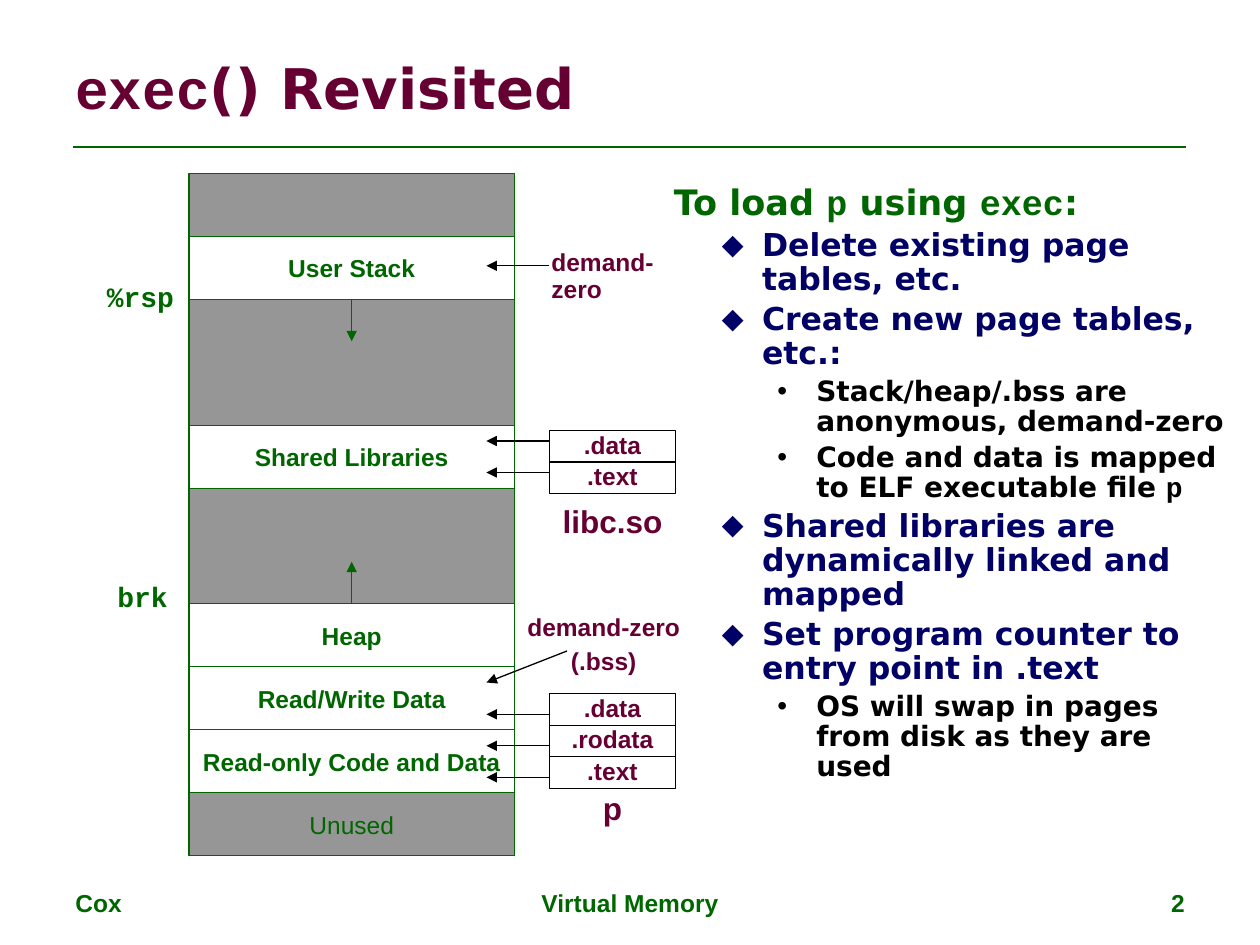
from pptx import Presentation
from pptx.dml.color import RGBColor
from pptx.enum import shapes, text
from pptx.oxml import xmlchemy
from pptx.util import Pt

COLORS = {"green": "006600", "wine": "660033", "navy": "000066",
          "black": "000000", "white": "FFFFFF", "gray": "969696"}
SANS, MONO, HEAD = "Arial", "Courier New", "DejaVu Sans"
LEFT, CENTER, RIGHT = text.PP_ALIGN.LEFT, text.PP_ALIGN.CENTER, text.PP_ALIGN.RIGHT
TOP, MIDDLE = text.MSO_ANCHOR.TOP, text.MSO_ANCHOR.MIDDLE
LEVELS = [dict(size=20, color="green", before=4, left=0, hang=0, bullet=None),
          dict(size=18, color="navy", before=3.6, left=50.4, hang=23,
               bullet=("90000", HEAD, "◆")),
          dict(size=16, color="black", before=3.2, left=81.4, hang=22.3,
               bullet=("100000", SANS, "•"))]
BODY = [(0, "To load `p` using `exec`:"),
        (1, "Delete existing page tables, etc."),
        (1, "Create new page tables, etc.:"),
        (2, "Stack/heap/.bss are anonymous, demand-zero"),
        (2, "Code and data is mapped to ELF executable file `p`"),
        (1, "Shared libraries are dynamically linked and mapped"),
        (1, "Set program counter to entry point in .text"),
        (2, "OS will swap in pages from disk as they are used")]
SEGMENTS = [("User Stack", 36), ("Shared Libraries", 144), ("Heap", 246),
            ("Read/Write Data", 282), ("Read-only Code and Data", 318), ("Unused", 354)]


def rgb(name):
    return RGBColor.from_string(COLORS[name])


def add_xml(parent, tag, **attrs):
    element = xmlchemy.OxmlElement(tag)
    for name, value in attrs.items():
        element.set(name, value)
    parent.append(element)


def add_runs(p, words, size, color, font=SANS, bold=True):
    for i, part in enumerate(words.split("`")):
        if part:
            r = p.add_run()
            r.text = part
            r.font.size, r.font.bold = Pt(size), bold
            r.font.name = MONO if i % 2 else font
            r.font.color.rgb = rgb(color)


def add_label(s, box, lines, size, color, font=SANS, align=LEFT, anchor=TOP,
              wrap=True, tight=False):
    sp = s.shapes.add_textbox(*map(Pt, box))
    tf = sp.text_frame
    tf.word_wrap, tf.vertical_anchor = wrap, anchor
    for i, line in enumerate(lines):
        p = tf.paragraphs[0] if i == 0 else tf.add_paragraph()
        p.alignment = align
        if tight:
            p.line_spacing, p.space_before = 0.9, Pt(4.6)
        add_runs(p, line, size, color, font)


def add_box(s, box, words, fill, line, color, bold=True, spacing=1.0):
    sp = s.shapes.add_shape(shapes.MSO_SHAPE.RECTANGLE, *map(Pt, box))
    sp.shadow.inherit = False
    if fill:
        sp.fill.solid()
        sp.fill.fore_color.rgb = rgb(fill)
    else:
        sp.fill.background()
    sp.line.color.rgb, sp.line.width = rgb(line), Pt(0.75)
    tf = sp.text_frame
    tf.word_wrap, tf.vertical_anchor = False, MIDDLE
    p = tf.paragraphs[0]
    p.alignment, p.line_spacing = CENTER, spacing
    add_runs(p, words, 14, color, bold=bold)
    return sp


def add_line(s, ends, color, width=0.75, arrow=True):
    c = s.shapes.add_connector(shapes.MSO_CONNECTOR.STRAIGHT, *map(Pt, ends))
    c.line.color.rgb, c.line.width = rgb(color), Pt(width)
    if arrow:
        add_xml(c.line._get_or_add_ln(), "a:tailEnd", type="triangle")
    add_xml(c._element.spPr, "a:effectLst")
    return c


def frame(s, x, y, w, h):
    add_label(s, (x, y + 21.6, w, 56.2), ["`exec`() Revisited"], 32, "wine", HEAD, anchor=MIDDLE)
    add_line(s, (x + 6, y + 84, x + w - 6, y + 84), "green", 1.5, arrow=False)
    for words, left, width, align in [("Cox", 0, 168, LEFT),
                                      ("Virtual Memory", 210, 228, CENTER),
                                      ("2", 480, 168, RIGHT)]:
        add_label(s, (x + left, y + h - 36, width, 25), [words], 14, "green", align=align)


def body(s, x, y, w, h):
    sp = s.shapes.add_textbox(*map(Pt, (x, y, w, h)))
    tf = sp.text_frame
    tf.word_wrap = True
    for i, (level, words) in enumerate(BODY):
        style = LEVELS[level]
        p = tf.paragraphs[0] if i == 0 else tf.add_paragraph()
        p.level, p.line_spacing, p.space_before = level, 0.9, Pt(style["before"])
        add_runs(p, words, style["size"], style["color"], HEAD)
        pPr = p._p.get_or_add_pPr()
        pPr.set("marL", str(Pt(style["left"])))
        pPr.set("indent", str(-Pt(style["hang"])))
        if style["bullet"]:
            size, font, char = style["bullet"]
            add_xml(pPr, "a:buSzPct", val=size)
            add_xml(pPr, "a:buFont", typeface=font)
            add_xml(pPr, "a:buChar", char=char)


def memory(s, x, y, w, h):
    add_box(s, (x, y, w, h), "", "gray", "green", "green")
    blocks = {}
    for words, top in SEGMENTS:
        used = words != "Unused"
        blocks[words] = add_box(s, (x, y + top, w, 36), words,
                                "white" if used else None, "green", "green", used)
    mid = x + w / 2
    for words, start, step, side in [("Heap", 246, -24, 0), ("User Stack", 72, 24, 2)]:
        c = add_line(s, (mid, y + start, mid, y + start + step), "green")
        c.begin_connect(blocks[words], side)
    for words, left, top, width in [("`%rsp`", -54, 57, 53), ("`brk`", -48, 228.6, 43)]:
        add_label(s, (x + left, y + top, width, 26.6), [words], 16, "green", wrap=False)


def file_sections(s, x, y, w, names, title, title_top, arrow_top):
    for i, name in enumerate(names):
        top = y + 18 * i
        add_box(s, (x, top, w, 18), name, "white", "black", "wine", spacing=0.9)
        add_line(s, (x, top + arrow_top, x - 36, top + arrow_top), "black")
    add_label(s, (x, y + title_top, w, 26.6), [title], 18, "wine",
              align=CENTER, wrap=False, tight=True)


def demand_zero(s, x, y, w, h, lines, ends, align, wrap):
    add_label(s, (x, y, w, h), lines, 14, "wine", align=align, wrap=wrap, tight=True)
    x1, y1, x2, y2 = ends
    add_line(s, (x + x1, y + y1, x + x2, y + y2), "black")


def main():
    prs = Presentation()
    prs.slide_width, prs.slide_height = Pt(720), Pt(540)
    s = prs.slides.add_slide(prs.slide_layouts[6])
    frame(s, 36, 0, 648, 540)
    body(s, 378, 102.3, 330, 380)
    memory(s, 108, 99, 186, 390)
    file_sections(s, 314, 246, 72, [".data", ".text"], "libc.so", 39.7, 6)
    file_sections(s, 314, 396.4, 72, [".data", ".rodata", ".text"], "p", 53.6, 11.8)
    demand_zero(s, 293, 348, 104, 42.5, ["demand-zero", "(.bss)"],
                (31, 24, -15, 42), CENTER, False)
    demand_zero(s, 308, 139.7, 100, 22.3, ["demand-zero"], (6, 12.2, -30, 12.2), LEFT, True)
    prs.save("out.pptx")


if __name__ == "__main__":
    main()
